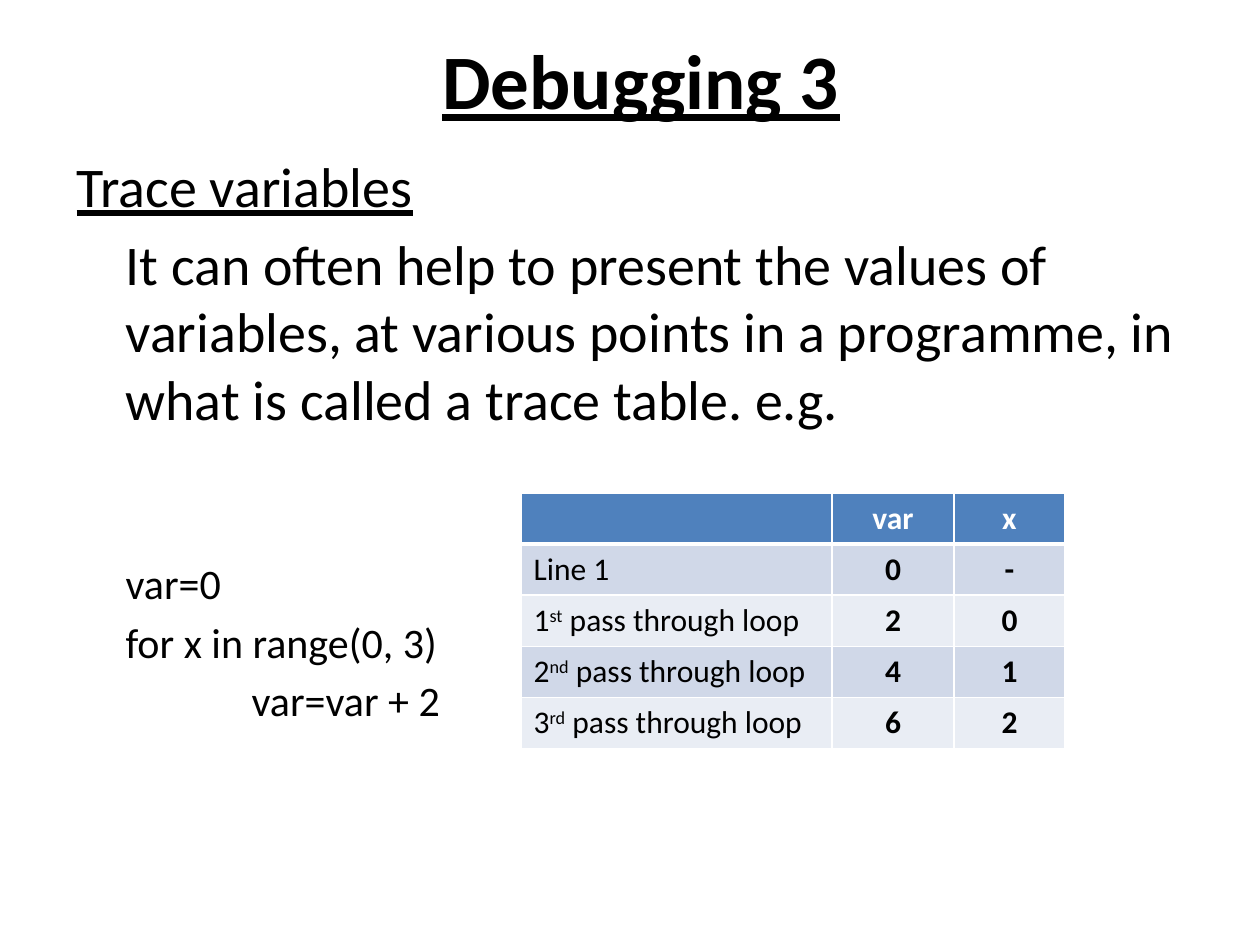
from dataclasses import dataclass

from lxml import etree
from pptx import Presentation
from pptx import util as u
from pptx.dml.color import RGBColor
from pptx.enum import text
from pptx.oxml.ns import qn

PX = 914400 / 126


@dataclass(frozen=True)
class Theme:
    font: str = "Calibri"
    ink: str = "000000"
    white: str = "FFFFFF"
    header: str = "4F81BD"
    bands: tuple = ("D0D8E8", "E9EDF4")
    title_size: int = 44
    body_size: int = 32
    code_size: int = 24
    table_size: int = 18


THEME = Theme()
CENTER = text.PP_ALIGN.CENTER
INDENT = 49
TAB = 126

CODE = [("var=0", 0), ("for x in range(0, 3)", 0), ("var=var + 2", 1)]
HEADINGS = ["", "var", "x"]
# Each label is split into plain text, superscript and plain text
TRACE = [
    (("Line 1", "", ""), "0", "-"),
    (("1", "st", " pass through loop"), "2", "0"),
    (("2", "nd", " pass through loop"), "4", "1"),
    (("3", "rd", " pass through loop"), "6", "2"),
]


def px(length):
    return u.Emu(round(length * PX))


def place(shape, box):
    shape.left, shape.top, shape.width, shape.height = map(px, box)


def add_text(paragraph, words, size, color=THEME.ink, bold=False,
             underline=False, align=None, baseline=0):
    """Append one formatted run to a paragraph."""
    if align is not None:
        paragraph.alignment = align
    run = paragraph.add_run()
    run.text = words
    font = run.font
    font.name, font.size = THEME.font, u.Pt(size)
    font.bold, font.underline = bold, underline
    font.color.rgb = RGBColor.from_string(color)
    if baseline:
        run._r.get_or_add_rPr().set("baseline", str(baseline * 1000))


def indent_plain(paragraph, margin):
    """Set the left margin and switch the bullet off."""
    properties = paragraph._p.get_or_add_pPr()
    properties.set("marL", str(px(margin)))
    properties.set("indent", "0")
    etree.SubElement(properties, qn("a:buNone"))


def set_borders(cell, **widths):
    properties = cell._tc.get_or_add_tcPr()
    for side in "LRTB":
        line = etree.SubElement(properties, qn(f"a:ln{side}"),
                                w=str(u.Pt(widths.get(side, 1))))
        fill = etree.SubElement(line, qn("a:solidFill"))
        etree.SubElement(fill, qn("a:srgbClr"), val=THEME.white)


def build_title(shape, box):
    place(shape, box)
    frame = shape.text_frame
    frame.vertical_anchor = text.MSO_ANCHOR.MIDDLE
    add_text(frame.paragraphs[0], "Debugging 3", THEME.title_size,
             bold=True, underline=True, align=CENTER)


def build_body(shape, box):
    place(shape, box)
    frame = shape.text_frame
    frame.auto_size = text.MSO_AUTO_SIZE.NONE

    # Heading and explanation
    heading = frame.paragraphs[0]
    indent_plain(heading, 0)
    add_text(heading, "Trace variables", THEME.body_size, underline=True)
    explanation = frame.add_paragraph()
    indent_plain(explanation, INDENT)
    add_text(explanation, "It can often help to present the values of variables, "
             "at various points in a programme, in what is called a trace table. "
             "e.g.", THEME.body_size)

    # Code sample, set apart from the explanation
    for number, (words, level) in enumerate(CODE):
        paragraph = frame.add_paragraph()
        indent_plain(paragraph, INDENT + level * TAB)
        if number == 0:
            paragraph.space_before = u.Pt(72)
        add_text(paragraph, words, THEME.code_size)


def build_trace_table(slide, box, column_widths):
    table = slide.shapes.add_table(len(TRACE) + 1, len(HEADINGS),
                                   *map(px, box)).table
    table.first_row = table.horz_banding = False
    for column, width in zip(table.columns, column_widths):
        column.width = px(width)

    # Header row
    for cell, words in zip(table.rows[0].cells, HEADINGS):
        set_borders(cell, B=3)
        cell.fill.solid()
        cell.fill.fore_color.rgb = RGBColor.from_string(THEME.header)
        if words:
            add_text(cell.text_frame.paragraphs[0], words, THEME.table_size,
                     color=THEME.white, bold=True, align=CENTER)

    # Banded rows of traced values
    for row, (label, *values) in enumerate(TRACE, start=1):
        cells = list(table.rows[row].cells)
        for cell in cells:
            set_borders(cell, T=3 if row == 1 else 1)
            cell.fill.solid()
            cell.fill.fore_color.rgb = RGBColor.from_string(
                THEME.bands[(row - 1) % 2])
        for part, baseline in zip(label, (0, 30, 0)):
            if part:
                add_text(cells[0].text_frame.paragraphs[0], part,
                         THEME.table_size, baseline=baseline)
        for cell, value in zip(cells[1:], values):
            add_text(cell.text_frame.paragraphs[0], value, THEME.table_size,
                     bold=True, align=CENTER)


def main():
    presentation = Presentation()
    presentation.slide_width, presentation.slide_height = px(1260), px(945)
    slide = presentation.slides.add_slide(presentation.slide_layouts[1])
    build_title(slide.shapes.title, (74, 0, 1134, 158))
    build_body(slide.placeholders[1], (64, 145, 1134, 745))
    build_trace_table(slide, (521, 493, 544, 255), (311, 122, 111))
    presentation.save("out.pptx")


if __name__ == "__main__":
    main()
